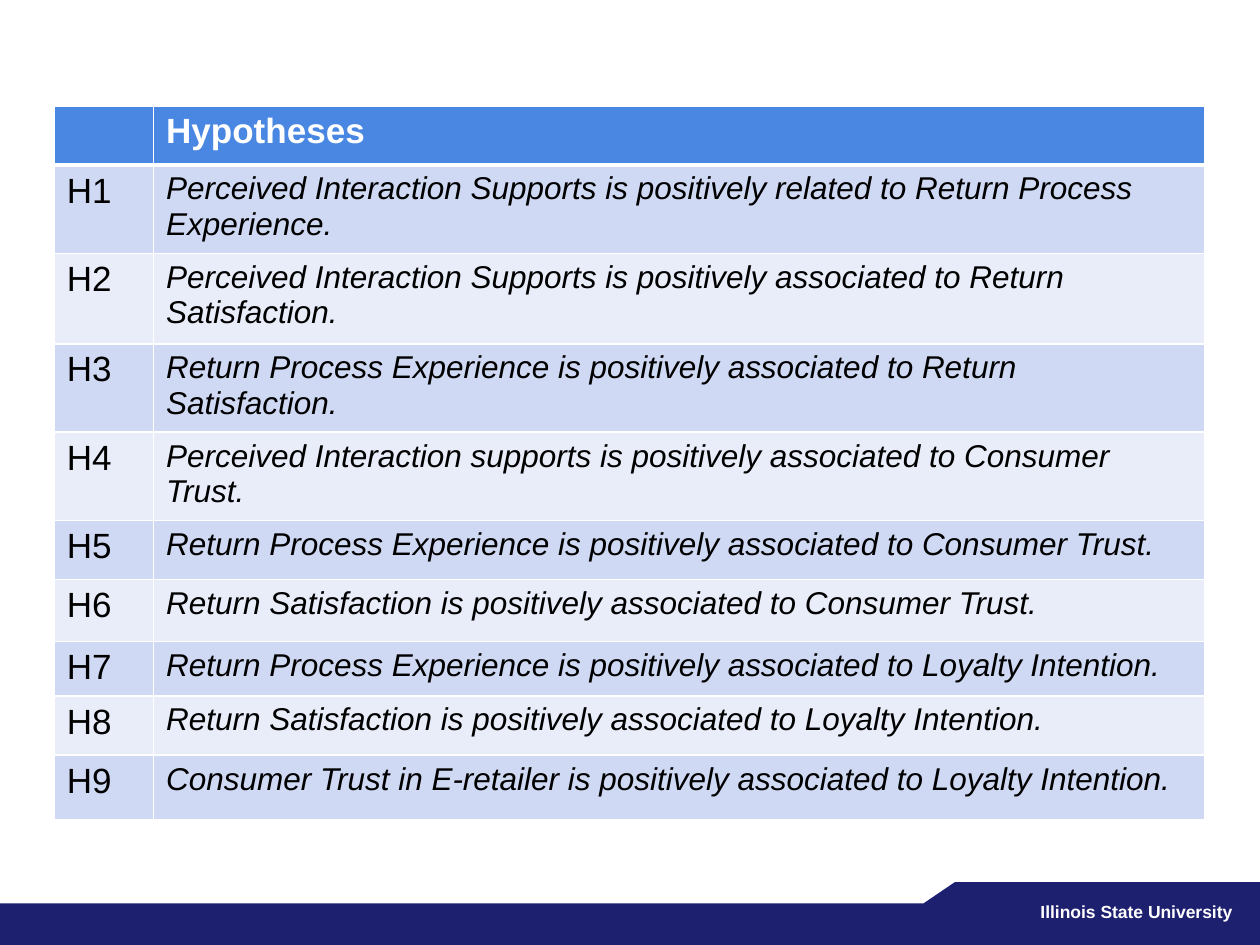
from lxml import etree
from pptx import Presentation
from pptx.dml.color import RGBColor
from pptx.enum.shapes import MSO_SHAPE
from pptx.enum.text import MSO_AUTO_SIZE, PP_ALIGN
from pptx.oxml.ns import qn
from pptx.util import Inches, Pt

FONT = "Arial"
NAVY, BLUE, WHITE, BLACK = "1D1F6F", "4987E3", "FFFFFF", "000000"
BANDS = ("D0D9F4", "E9EDFA")

HYPOTHESES = [
    "Perceived Interaction Supports is positively related to Return Process Experience.",
    "Perceived Interaction Supports is positively associated to Return Satisfaction.",
    "Return Process Experience is positively associated to Return Satisfaction.",
    "Perceived Interaction supports is positively associated to Consumer Trust.",
    "Return Process Experience is positively associated to Consumer Trust.",
    "Return Satisfaction is positively associated to Consumer Trust.",
    "Return Process Experience is positively associated to Loyalty Intention.",
    "Return Satisfaction is positively associated to Loyalty Intention.",
    "Consumer Trust in E-retailer is positively associated to Loyalty Intention.",
]
COLUMN_SHARES = (0.79, 8.35)
ROW_HEIGHTS = (0.47, 0.61, 0.72, 0.49, 0.53, 0.47, 0.49, 0.43, 0.47, 0.51)


def color(hex_string):
    return RGBColor.from_string(hex_string)


def paint(shape, hex_string):
    shape.shadow.inherit = False
    shape.fill.solid()
    shape.fill.fore_color.rgb = color(hex_string)
    shape.line.fill.background()


def write(text_frame, text, size, hex_string, bold=False, italic=False):
    text_frame.text = text
    font = text_frame.paragraphs[0].font
    if text:
        font = text_frame.paragraphs[0].runs[0].font
    font.name, font.size = FONT, Pt(size)
    font.bold, font.italic = bold, italic
    font.color.rgb = color(hex_string)


def set_borders(cell, top, bottom):
    """White borders of 1 pt at the sides and the given widths above and below."""
    properties = cell._tc.get_or_add_tcPr()
    widths = {"a:lnL": 1, "a:lnR": 1, "a:lnT": top, "a:lnB": bottom}
    for position, (tag, width) in enumerate(widths.items()):
        line = etree.Element(qn(tag), w=str(Pt(width)))
        fill = etree.SubElement(line, qn("a:solidFill"))
        etree.SubElement(fill, qn("a:srgbClr"), val=WHITE)
        properties.insert(position, line)


def add_hypotheses_table(slide, left, top, width, height):
    frame = slide.shapes.add_table(len(HYPOTHESES) + 1, 2, Inches(left), Inches(top),
                                   Inches(width), Inches(height))
    table = frame.table
    for column, share in zip(table.columns, COLUMN_SHARES):
        column.width = Inches(width * share / sum(COLUMN_SHARES))
    for row, row_height in zip(table.rows, ROW_HEIGHTS):
        row.height = Inches(row_height)

    rows = [("", "Hypotheses")]
    rows += [(f"H{number}", text) for number, text in enumerate(HYPOTHESES, 1)]
    for row_index, texts in enumerate(rows):
        header = row_index == 0
        for column_index, text in enumerate(texts):
            cell = table.cell(row_index, column_index)
            statement = not header and column_index == 1
            write(cell.text_frame, text, 18 if statement else 20,
                  WHITE if header else BLACK, bold=header, italic=statement)
            cell.fill.solid()
            cell.fill.fore_color.rgb = color(BLUE if header else BANDS[(row_index - 1) % 2])
            set_borders(cell, 3 if row_index == 1 else 1, 3 if header else 1)


def add_footer(slide, left, top, width, height):
    right = left + width

    # Full-width band
    band_top = top + 0.17
    band = slide.shapes.add_shape(MSO_SHAPE.RECTANGLE, Inches(left), Inches(band_top),
                                  Inches(width), Inches(height - 0.17))
    paint(band, NAVY)

    # Raised tab with a slanted left edge
    tab_left, tab_bottom = right - 2.67, top + 0.25
    builder = slide.shapes.build_freeform(Inches(tab_left), Inches(band_top))
    corners = [(tab_left + 0.25, top), (right, top), (right, tab_bottom), (tab_left, tab_bottom)]
    builder.add_line_segments([(Inches(x), Inches(y)) for x, y in corners], close=True)
    paint(builder.convert_to_shape(), NAVY)

    # University name
    label = slide.shapes.add_textbox(Inches(right - 1.84), Inches(top + 0.1),
                                     Inches(1.74), Inches(0.27))
    label.text_frame.word_wrap = False
    label.text_frame.auto_size = MSO_AUTO_SIZE.SHAPE_TO_FIT_TEXT
    write(label.text_frame, "Illinois State University", 10, WHITE, bold=True)
    label.text_frame.paragraphs[0].alignment = PP_ALIGN.LEFT


def main():
    presentation = Presentation()
    presentation.slide_width, presentation.slide_height = Inches(10), Inches(7.5)
    slide = presentation.slides.add_slide(presentation.slide_layouts[6])
    slide.background.fill.solid()
    slide.background.fill.fore_color.rgb = color(WHITE)
    add_footer(slide, 0, 7, 10, 0.5)
    add_hypotheses_table(slide, 0.43, 0.84, 9.13, 5.28)
    presentation.save("out.pptx")


if __name__ == "__main__":
    main()
